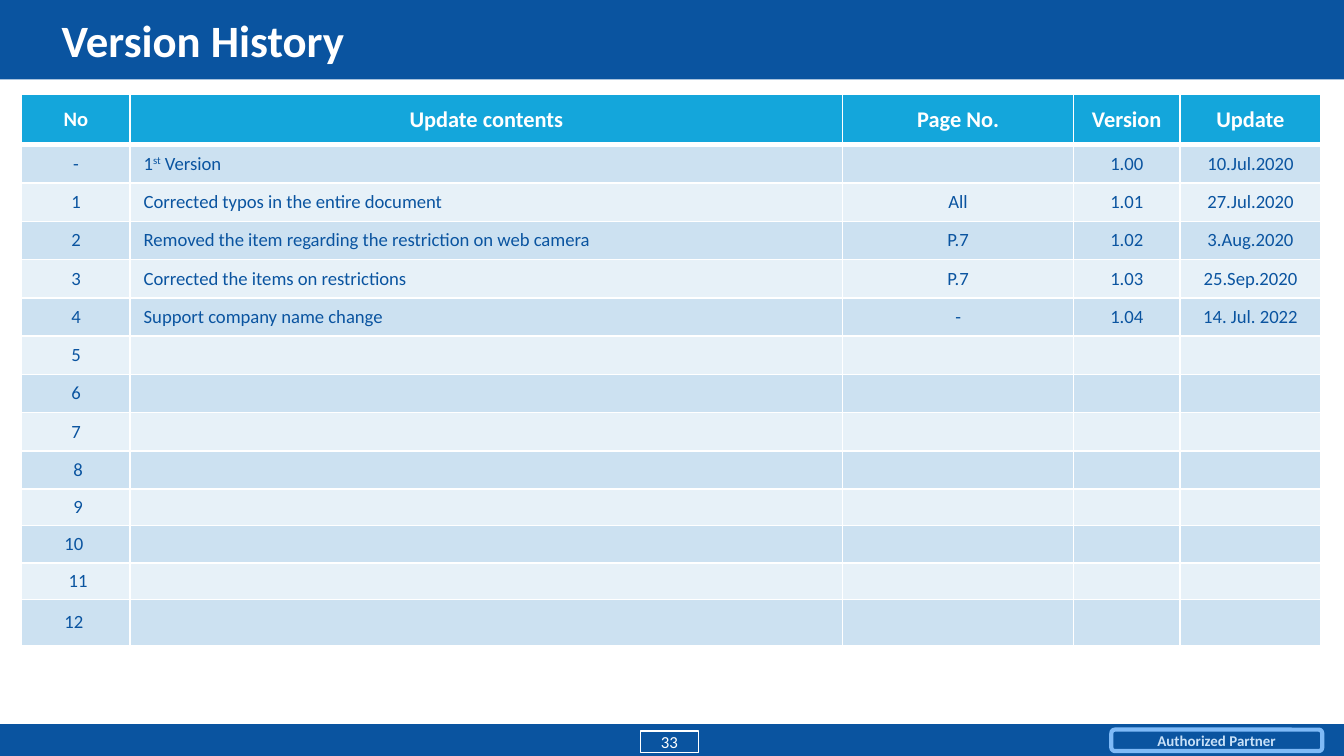
from dataclasses import dataclass

from lxml import etree
from pptx import Presentation
from pptx import util as u
from pptx.dml.color import RGBColor
from pptx.enum import shapes, text
from pptx.oxml import ns

Pt = u.Pt


@dataclass(frozen=True)
class Theme:
    """Colours, font and type sizes of the deck."""
    font: str = "Calibri"
    navy: str = "0A54A0"
    cyan: str = "14A6DB"
    white: str = "FFFFFF"
    bands: tuple = ("CCE1F1", "E7F1F8")
    badge_line: str = "7FBAF7"
    badge_text: str = "C9E1F8"
    title: float = 24
    heading: float = 12
    small_heading: float = 11
    body: float = 10
    page_number: float = 9
    badge: float = 8


THEME = Theme()
CENTER, LEFT = text.PP_ALIGN.CENTER, text.PP_ALIGN.LEFT
COLUMN_WIDTHS = (58.2, 381.6, 123.8, 56.9, 75.6)
ROW_HEIGHTS = (27, *[20.5] * 9, 19.6, 20, 19.6, 24.7)
HEADINGS = ("No", "Update contents", "Page No.", "Version", "Update")
VERSIONS = (
    ("-", ("1", "st", " Version"), "", "1.00", "10.Jul.2020"),
    ("1", "Corrected typos in the entire document", "All", "1.01", "27.Jul.2020"),
    ("2", "Removed the item regarding the restriction on web camera", "P.7", "1.02", "3.Aug.2020"),
    ("3", "Corrected the items on restrictions", "P.7", "1.03", "25.Sep.2020"),
    ("4", "Support company name change", "-", "1.04", "14. Jul. 2022"),
)
FREE_NUMBERS = ("5", "6", "7", " 8", " 9", "10 ", " 11", "12 ")


def write(frame, content, size, color, bold=False, align=CENTER):
    """Write one paragraph; in a tuple every second part is superscript."""
    para = frame.paragraphs[0]
    para.alignment = align
    para.font.name, para.font.size, para.font.bold = THEME.font, Pt(size), bold
    para.font.color.rgb = RGBColor.from_string(color)
    parts = content if isinstance(content, tuple) else (content,)
    for index, part in enumerate(filter(None, parts)):
        span = para.add_run()
        span.text = part
        if index % 2:
            span.font._element.set("baseline", "30000")
    etree.SubElement(para._p, ns.qn("a:endParaRPr"), sz=str(size * 100))


def add_box(page, box, kind=shapes.MSO_SHAPE.RECTANGLE, fill=None, line=None, weight=0.75):
    """Add a flat shape with an optional fill and outline."""
    shape = page.shapes.add_shape(kind, *map(Pt, box))
    shape.shadow.inherit = False
    if fill:
        shape.fill.solid()
        shape.fill.fore_color.rgb = RGBColor.from_string(fill)
    else:
        shape.fill.background()
    if line:
        shape.line.color.rgb = RGBColor.from_string(line)
        shape.line.width = Pt(weight)
    else:
        shape.line.fill.background()
    return shape


def set_frame(frame, wrap=True, inset=0):
    """Centre a text frame vertically and set its insets."""
    frame.word_wrap = wrap
    frame.vertical_anchor = text.MSO_ANCHOR.MIDDLE
    frame.margin_left = frame.margin_right = Pt(inset)
    frame.margin_top = frame.margin_bottom = 0


def add_header(page, box, title):
    """Draw the title band across the top."""
    left, top, width, height = box
    add_box(page, box, fill=THEME.navy)
    title_box = page.shapes.add_textbox(Pt(left + 26), Pt(top + 1), Pt(width - 116), Pt(height - 1.5))
    set_frame(title_box.text_frame, inset=7.2)
    write(title_box.text_frame, title, THEME.title, THEME.white, True, LEFT)


def add_footer(page, box, number, label):
    """Draw the bottom band with page number and partner badge."""
    left, top, width, height = box
    add_box(page, box, fill=THEME.navy)
    badge = add_box(page, (left + width - 124.6, top + 2.9, 113, 11.5),
                    shapes.MSO_SHAPE.ROUNDED_RECTANGLE, line=THEME.badge_line, weight=2.25)
    set_frame(badge.text_frame, wrap=False)
    write(badge.text_frame, label, THEME.badge, THEME.badge_text, True)
    number_box = add_box(page, (left + 343.2, top + 3.6, 31, 11.5), line=THEME.white)
    set_frame(number_box.text_frame)
    write(number_box.text_frame, number, THEME.page_number, THEME.white)


def style_cell(cell, fill, bottom=1):
    """Give a cell its white borders, fill and anchor."""
    properties = cell._tc.get_or_add_tcPr()
    for side, weight in (("L", 1), ("R", 1), ("T", 1), ("B", bottom)):
        line = etree.SubElement(properties, ns.qn(f"a:ln{side}"), w=str(Pt(weight)))
        solid = etree.SubElement(line, ns.qn("a:solidFill"))
        etree.SubElement(solid, ns.qn("a:srgbClr"), val=THEME.white)
    cell.fill.solid()
    cell.fill.fore_color.rgb = RGBColor.from_string(fill)
    cell.vertical_anchor = text.MSO_ANCHOR.MIDDLE


def add_history(page, box):
    """Build the banded version table."""
    rows = VERSIONS + tuple((number, "", "", "", "") for number in FREE_NUMBERS)
    table = page.shapes.add_table(len(rows) + 1, len(HEADINGS), *map(Pt, box)).table
    for column, width in zip(table.columns, COLUMN_WIDTHS):
        column.width = Pt(width)
    for row, height in zip(table.rows, ROW_HEIGHTS):
        row.height = Pt(height)
    for index, heading in enumerate(HEADINGS):
        cell = table.cell(0, index)
        style_cell(cell, THEME.cyan, bottom=3)
        size = THEME.heading if index else THEME.small_heading
        write(cell.text_frame, heading, size, THEME.white, True)
    for row_index, row in enumerate(rows):
        for index, content in enumerate(row):
            cell = table.cell(row_index + 1, index)
            style_cell(cell, THEME.bands[row_index % 2])
            align = LEFT if index == 1 else CENTER
            write(cell.text_frame, content, THEME.body, THEME.navy, align=align)


def main():
    """Build and save the version history slide."""
    deck = Presentation()
    deck.slide_width, deck.slide_height = Pt(720), Pt(405)
    page = deck.slides.add_slide(deck.slide_layouts[6])
    add_footer(page, (0, 388, 720, 17), "33", "Authorized Partner")
    add_header(page, (0, 0, 720, 42.5), "Version History")
    add_history(page, (11.6, 50.6, sum(COLUMN_WIDTHS), sum(ROW_HEIGHTS)))
    deck.save("out.pptx")


if __name__ == "__main__":
    main()
